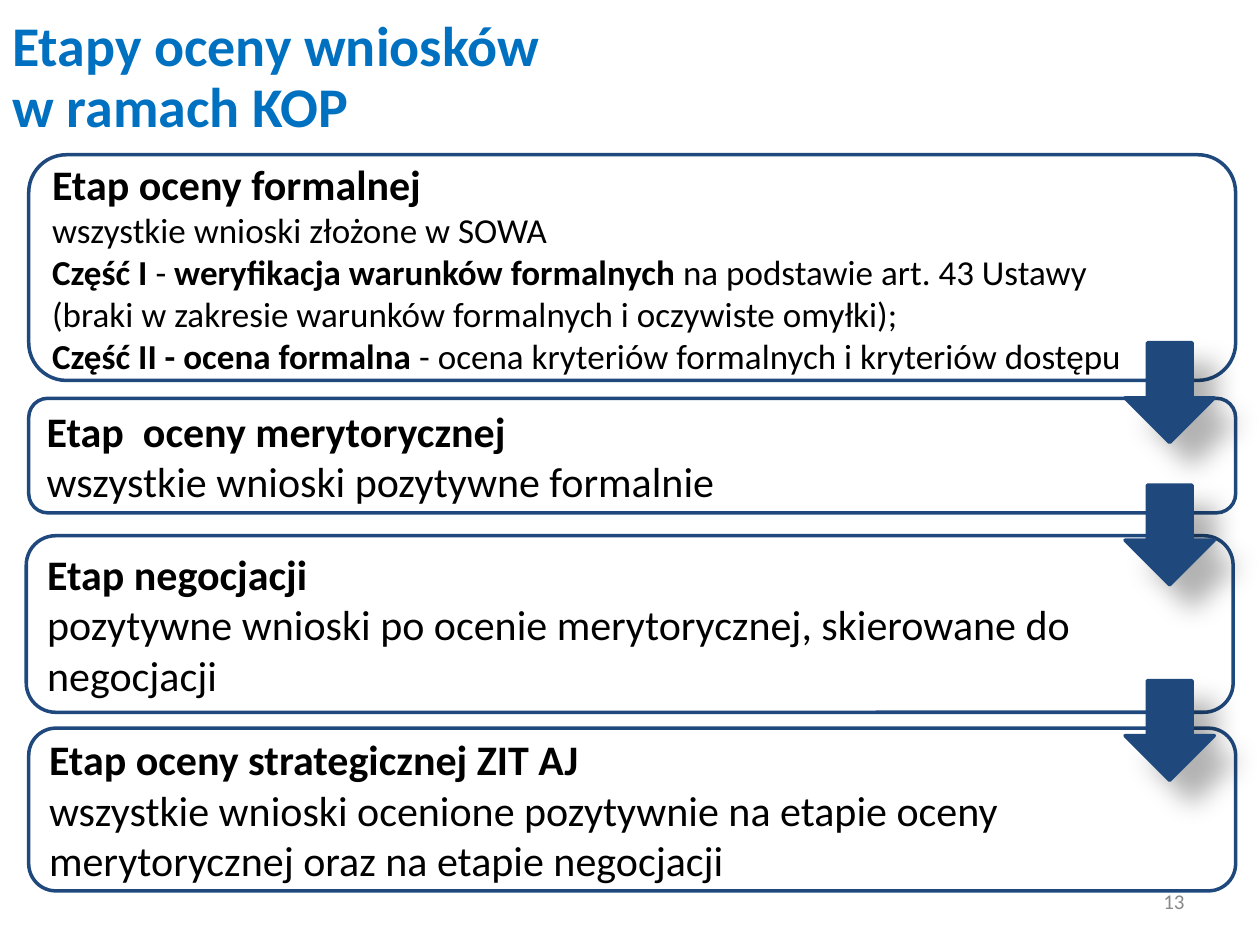
from lxml import etree
from pptx import Presentation
from pptx.dml.color import RGBColor
from pptx.enum.shapes import MSO_SHAPE
from pptx.enum.text import MSO_ANCHOR, PP_ALIGN
from pptx.oxml.ns import qn
from pptx.util import Cm, Pt

NAVY = RGBColor(0x1F, 0x49, 0x7D)
BLUE = RGBColor(0x00, 0x70, 0xC0)
GREY = RGBColor(0x89, 0x89, 0x89)
BLACK = RGBColor(0x00, 0x00, 0x00)
WHITE = RGBColor(0xFF, 0xFF, 0xFF)


def style(font, size, color, bold=False):
    font.name = "Calibri"
    font.size = Pt(size)
    font.bold = bold
    font.color.rgb = color


def add_block(kind, left, top, width, height, fill):
    block = slide.shapes.add_shape(kind, Cm(left), Cm(top), Cm(width), Cm(height))
    block.shadow.inherit = False
    block.fill.solid()
    block.fill.fore_color.rgb = fill
    block.line.color.rgb = NAVY
    block.line.width = Pt(2)
    return block


prs = Presentation()
prs.slide_width, prs.slide_height = Cm(25.4), Cm(19.05)
slide = prs.slides.add_slide(prs.slide_layouts[6])

# Title and page number
for text, left, top, width, height, size, color, bold, align in [
    ("Etapy oceny wniosków \vw ramach KOP", 0, 0, 22.91, 3.18, 32, BLUE, True, PP_ALIGN.LEFT),
    ("13", 18.21, 17.65, 5.92, 1.02, 12, GREY, False, PP_ALIGN.RIGHT),
]:
    caption = slide.shapes.add_textbox(Cm(left), Cm(top), Cm(width), Cm(height))
    frame = caption.text_frame
    frame.word_wrap = True
    frame.vertical_anchor = MSO_ANCHOR.MIDDLE
    frame.text = text
    line = frame.paragraphs[0]
    line.alignment = align
    if bold:
        line.line_spacing = 0.9
    for run in line.runs:
        style(run.font, size, color, bold)

# Stages: left, top, height, body size, heading, body lines of (text, bold) parts
stages = [
    (0.58, 3.12, 4.55, 20, "Etap oceny formalnej", [
        [("wszystkie wnioski złożone w SOWA", False)],
        [("Część I ", True), ("- ", False), ("weryfikacja warunków formalnych ", True),
         ("na podstawie art. 43 Ustawy", False)],
        [("(braki w zakresie warunków formalnych i oczywiste omyłki);", False)],
        [("Część II - ocena formalna ", True),
         ("- ocena kryteriów formalnych i kryteriów dostępu", False)],
    ]),
    (0.58, 8.03, 2.31, 24, "Etap  oceny merytorycznej", [
        [("wszystkie wnioski pozytywne formalnie", False)],
    ]),
    (0.53, 10.8, 3.56, 24, "Etap negocjacji", [
        [("pozytywne wnioski po ocenie merytorycznej, skierowane do negocjacji", False)],
    ]),
    (0.58, 14.68, 3.28, 24, "Etap oceny strategicznej ZIT AJ", [
        [("wszystkie wnioski ocenione pozytywnie na etapie oceny merytorycznej "
          "oraz na etapie negocjacji", False)],
    ]),
]
for left, top, height, body_size, heading, body in stages:
    stage = add_block(MSO_SHAPE.ROUNDED_RECTANGLE, left, top, 24.33, height, WHITE)
    frame = stage.text_frame
    frame.word_wrap = True
    frame.vertical_anchor = MSO_ANCHOR.MIDDLE
    for number, parts in enumerate([[(heading, True)]] + body):
        line = frame.add_paragraph() if number else frame.paragraphs[0]
        line.alignment = PP_ALIGN.LEFT
        for text, bold in parts:
            run = line.add_run()
            run.text = text
            style(run.font, body_size if number else 24, BLACK, bold)

# Arrows from stage to stage, with a soft shadow
for top in (6.91, 9.78, 13.72):
    arrow = add_block(MSO_SHAPE.DOWN_ARROW, 22.68, top, 1.8, 2.01, NAVY)
    effects = arrow._element.spPr.find(qn("a:effectLst"))
    shadow = etree.SubElement(effects, qn("a:outerShdw"), blurRad=str(Pt(15)),
                              dist=str(Pt(18)), dir=str(45 * 60000),
                              algn="ctr", rotWithShape="0")
    shade = etree.SubElement(shadow, qn("a:srgbClr"), val=str(BLACK))
    etree.SubElement(shade, qn("a:alpha"), val="30000")

prs.save("out.pptx")
